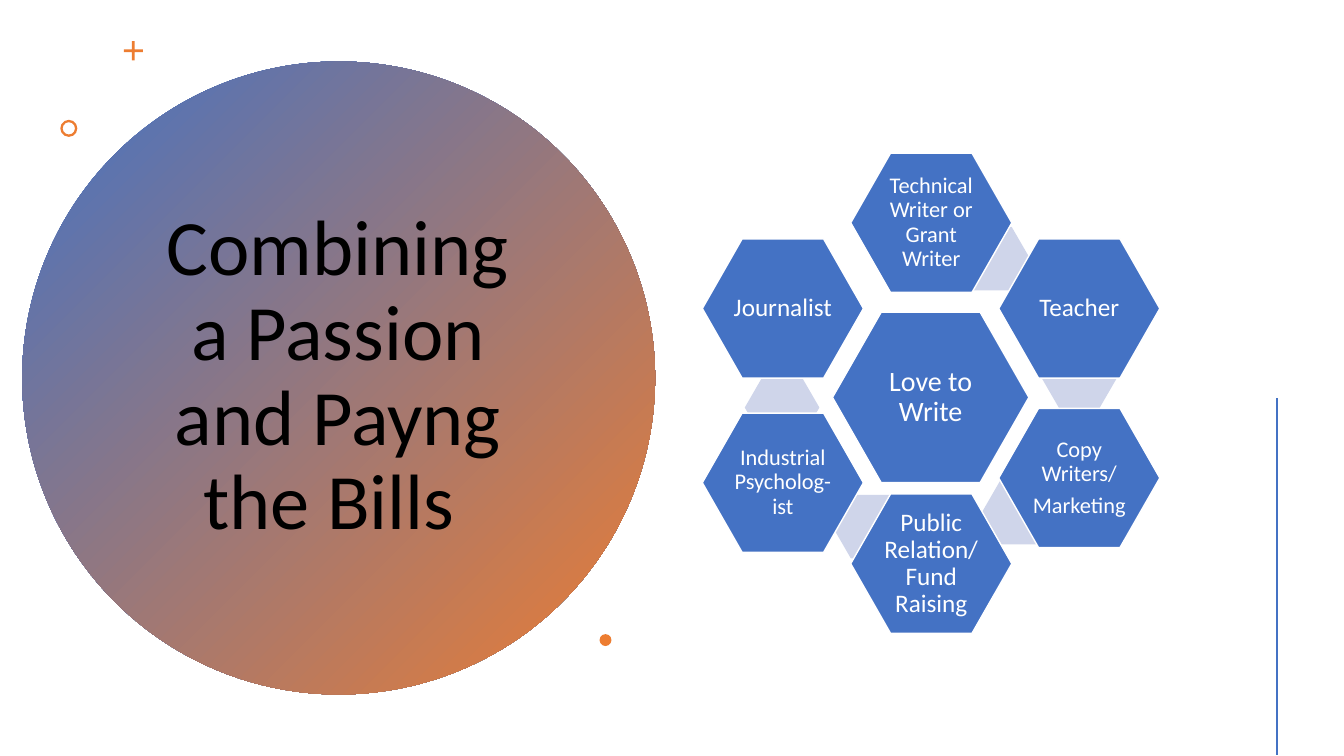
from dataclasses import dataclass
from typing import Optional, Tuple

from lxml.etree import SubElement
from pptx import Presentation
from pptx.dml.color import RGBColor
from pptx.enum.shapes import MSO_CONNECTOR, MSO_SHAPE as Shape
from pptx.enum.text import MSO_ANCHOR, MSO_AUTO_SIZE, PP_ALIGN
from pptx.oxml.ns import qn
from pptx.shapes.autoshape import Shape as AutoShape
from pptx.text.text import TextFrame
from pptx.util import Cm, Pt

BLUE = RGBColor(0x44, 0x72, 0xC4)
ORANGE = RGBColor(0xED, 0x7D, 0x31)
PALE = RGBColor(0xCF, 0xD5, 0xEA)
WHITE = RGBColor(0xFF, 0xFF, 0xFF)
BLACK = RGBColor(0, 0, 0)
FONT = "Calibri"

HUB_SIZE = (4.95, 4.29)
PETAL_SIZE = (4.06, 3.51)
LINK_SIZE = (1.88, 1.6)
LEFT, MIDDLE, RIGHT = 17.7, 21.44, 25.17


@dataclass(frozen=True)
class Cell:
    """A labelled hexagon and the pale link hexagon that lies behind it (cm)."""
    text: str
    x: float
    y: float
    font_size: int
    link: Optional[Tuple[float, float]] = None
    size: Tuple[float, float] = PETAL_SIZE


@dataclass(frozen=True)
class Accent:
    kind: Shape
    x: float
    y: float
    size: float
    adj: Optional[float] = None


CELLS = [
    Cell("Love to Write", 20.98, 7.87, 20, size=HUB_SIZE),
    Cell("Technical Writer or Grant Writer", MIDDLE, 3.86, 16, (24.08, 5.72)),
    Cell("Teacher", RIGHT, 6.02, 18, (26.26, 8.74)),
    Cell("Copy Writers/\nMarketing", RIGHT, 10.29, 16, (24.74, 12.12)),
    Cell("Public Relation/Fund Raising", MIDDLE, 12.45, 18, (20.98, 12.47)),
    Cell("Industrial Psycholog-ist", LEFT, 10.41, 16, (18.77, 9.47)),
    Cell("Journalist", LEFT, 6.02, 18),
]

ACCENTS = [
    Accent(Shape.CROSS, 3.12, 1.04, 0.48, 0.43),
    Accent(Shape.DONUT, 1.52, 3.02, 0.43, 0.14),
    Accent(Shape.OVAL, 15.11, 15.98, 0.3),
]


def add_flat(shapes, kind: Shape, x: float, y: float, w: float, h: float,
             color: RGBColor, adj: Optional[float] = None) -> AutoShape:
    """Add a solid shape without outline or shadow; lengths in cm."""
    sp = shapes.add_shape(kind, Cm(x), Cm(y), Cm(w), Cm(h))
    sp.shadow.inherit = False
    sp.fill.solid()
    sp.fill.fore_color.rgb = color
    sp.line.fill.background()
    if adj is not None:
        sp.adjustments[0] = adj
    return sp


def format_text(tf: TextFrame, size: int, color: RGBColor) -> None:
    tf.word_wrap = True
    tf.auto_size = MSO_AUTO_SIZE.NONE
    tf.vertical_anchor = MSO_ANCHOR.MIDDLE
    for p in tf.paragraphs:
        p.alignment = PP_ALIGN.CENTER
        p.line_spacing = 0.9
        p.font.name = FONT
        p.font.size = Pt(size)
        p.font.color.rgb = color


def add_cell(shapes, cell: Cell) -> None:
    if cell.link:
        add_flat(shapes, Shape.HEXAGON, *cell.link, *LINK_SIZE, PALE, 0.289)
    sp = add_flat(shapes, Shape.HEXAGON, cell.x, cell.y, *cell.size, BLUE, 0.286)
    sp.line.color.rgb = WHITE
    sp.line.width = Pt(1)
    tf = sp.text_frame
    tf.text = cell.text
    tf.margin_left = tf.margin_right = tf.margin_top = tf.margin_bottom = Cm(0.06)
    format_text(tf, cell.font_size, WHITE)
    for p in tf.paragraphs:
        p.space_after = Pt(0.35 * cell.font_size)


def main() -> None:
    prs = Presentation()
    prs.slide_width, prs.slide_height = Cm(33.87), Cm(19.05)
    s = prs.slides.add_slide(prs.slide_layouts[5])

    circle = add_flat(s.shapes, Shape.OVAL, 0.56, 1.55, 15.95, 15.95, BLUE)
    circle.fill.gradient()
    circle.fill.gradient_angle = 315
    for stop, color in zip(circle.fill.gradient_stops, (BLUE, ORANGE)):
        stop.color.rgb = color

    title = s.shapes.title
    title.left, title.top = Cm(3.45), Cm(3.58)
    title.width, title.height = Cm(10.13), Cm(11.86)
    title.text_frame.text = "Combining a Passion and Payng the Bills "
    format_text(title.text_frame, 56, BLACK)
    circle._element.addnext(title._element)

    for a in ACCENTS:
        add_flat(s.shapes, a.kind, a.x, a.y, a.size, a.size, ORANGE, a.adj)

    rule = s.shapes.add_connector(MSO_CONNECTOR.STRAIGHT,
                                  Cm(32.18), Cm(10.03), Cm(32.18), Cm(19.03))
    rule.line.color.rgb = BLUE
    rule.line.width = Pt(2)
    SubElement(rule._element.spPr, qn("a:effectLst"))

    wheel = s.shapes.add_group_shape()
    for cell in CELLS:
        add_cell(wheel.shapes, cell)

    prs.save("out.pptx")


if __name__ == "__main__":
    main()
